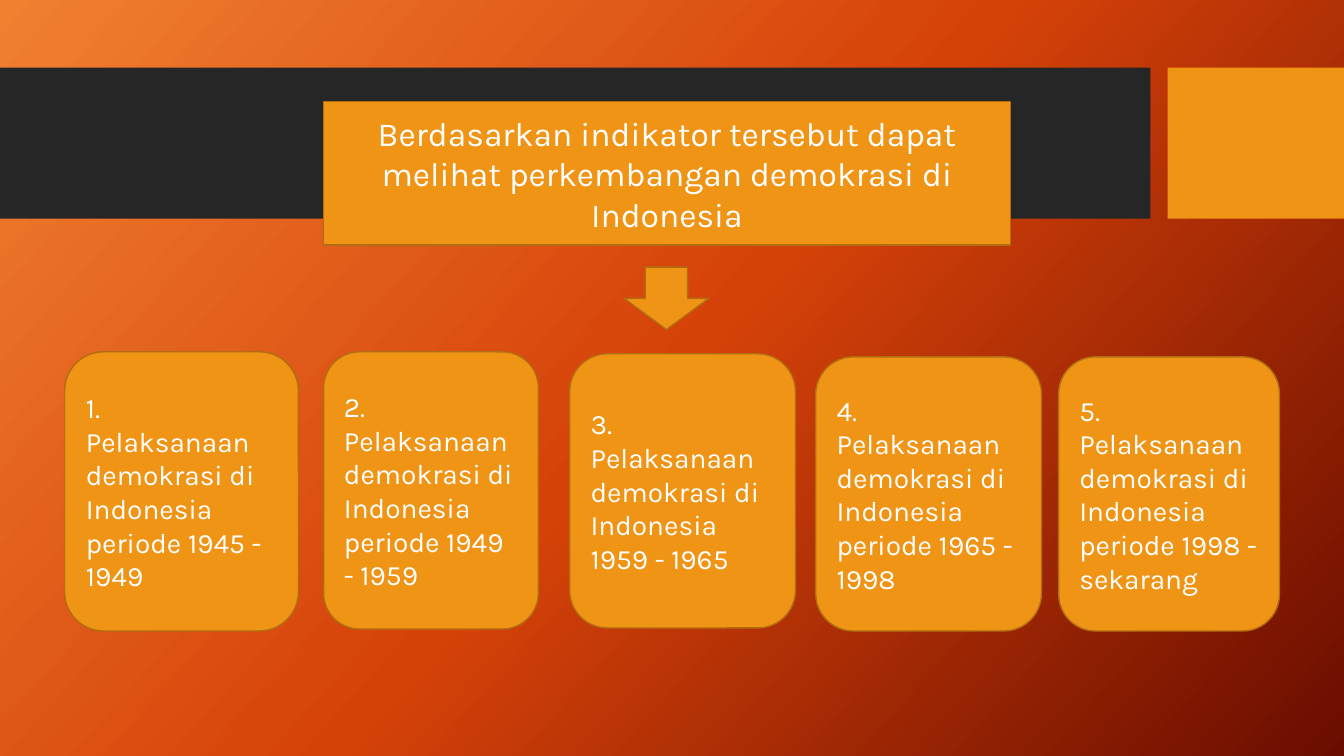
from copy import deepcopy
from pptx import Presentation, util as u
from pptx.dml import color
from pptx.enum import shapes, text
from pptx.oxml import parse_xml
from pptx.oxml.ns import nsdecls

HUES = {"dark": "262626", "gold": "F09415", "edge": "B26D10", "white": "FFFFFF",
        "light": "F18031", "mid": "D54209", "deep": "6A0D00"}
KIND = shapes.MSO_SHAPE
ALIGN = text.PP_ALIGN


def paint(shape, hue, edge=None):
    shape.fill.solid()
    shape.fill.fore_color.rgb = color.RGBColor.from_string(HUES[hue])
    if edge:
        shape.line.color.rgb = color.RGBColor.from_string(HUES[edge])
        shape.line.width = u.Pt(1)
    else:
        shape.line.fill.background()


def write(shape, words, size, align):
    frame = shape.text_frame
    frame.text = words
    setup = {"word_wrap": True, "auto_size": text.MSO_AUTO_SIZE.NONE,
             "vertical_anchor": text.MSO_ANCHOR.MIDDLE}
    for name, value in setup.items():
        setattr(frame, name, value)
    for para in frame.paragraphs:
        para.alignment = align
        for run in para.runs:
            for name, value in {"name": "Karla", "size": u.Pt(size)}.items():
                setattr(run.font, name, value)
            run.font.color.rgb = color.RGBColor.from_string(HUES["white"])


deck = Presentation()
deck.slide_width, deck.slide_height = u.Inches(13.33), u.Inches(7.5)
slide = deck.slides.add_slide(deck.slide_layouts[5])

# Diagonal background gradient with three stops
fill = slide.background.fill
fill.gradient()
fill.gradient_angle = 360 - 42
stops = slide._element.xpath(".//a:gsLst")[0]
stops.append(deepcopy(stops[-1]))
for stop, hue, place in zip(fill.gradient_stops, ("light", "mid", "deep"), (0, 0.5, 1)):
    stop.color.rgb = color.RGBColor.from_string(HUES[hue])
    stop.position = place

# Header bands
for left, width, hue in ((0, 11.41, "dark"), (11.58, 1.75, "gold")):
    band = slide.shapes.add_shape(KIND.RECTANGLE, u.Inches(left), u.Inches(0.67),
                                  u.Inches(width), u.Inches(1.5))
    band.shadow.inherit = False
    paint(band, hue)

# Title as a rounded box, in front of the bands
title = slide.shapes.title
place = {"left": 3.21, "top": 1.01, "width": 6.81, "height": 1.42}
for name, value in place.items():
    setattr(title, name, u.Inches(value))
title._element.spPr.append(parse_xml(
    f'<a:prstGeom {nsdecls("a")} prst="roundRect"><a:avLst/></a:prstGeom>'))
paint(title, "gold", "edge")
write(title, "Berdasarkan indikator tersebut dapat melihat perkembangan "
      "demokrasi di Indonesia", 24, ALIGN.CENTER)
slide.shapes._spTree.append(title._element)

# Period cards: left, top, width, height, number with its break, period
cards = [
    (0.64, 3.49, 2.32, 2.77, "1.\n", "periode 1945 - 1949"),
    (3.21, 3.49, 2.13, 2.75, "2.\n", "periode 1949 - 1959"),
    (5.65, 3.51, 2.24, 2.72, "3. ", "1959 - 1965"),
    (8.09, 3.54, 2.24, 2.72, "4. ", "periode 1965 - 1998"),
    (10.5, 3.54, 2.19, 2.72, "5.\n", "periode 1998 - sekarang"),
]
for *box, number, period in cards:
    card = slide.shapes.add_shape(KIND.ROUNDED_RECTANGLE, *map(u.Inches, box))
    card.shadow.inherit = False
    paint(card, "gold", "edge")
    write(card, f"{number}Pelaksanaan demokrasi di Indonesia {period}", 20, ALIGN.LEFT)

# Arrow from the title to the cards
arrow = slide.shapes.add_shape(KIND.DOWN_ARROW, u.Inches(6.19), u.Inches(2.65),
                               u.Inches(0.84), u.Inches(0.62))
arrow.shadow.inherit = False
paint(arrow, "gold", "edge")

deck.save("out.pptx")
